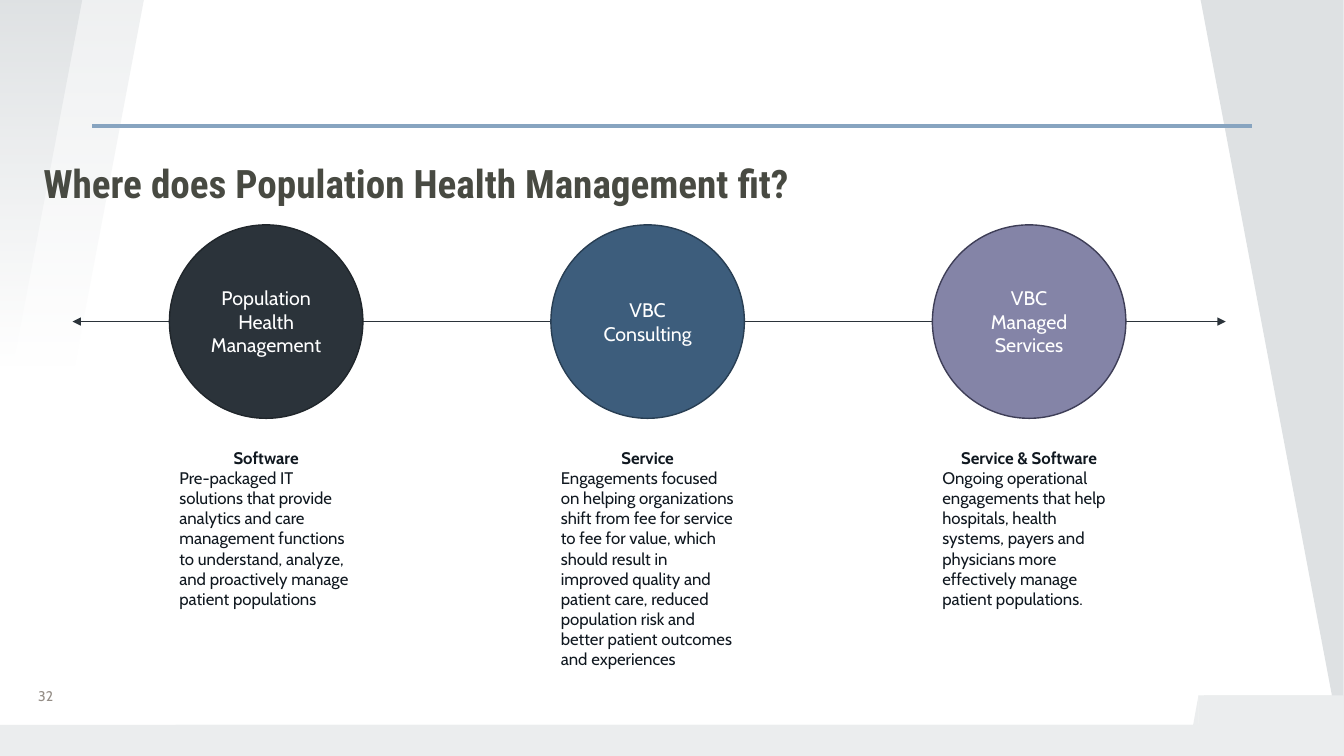
from dataclasses import dataclass
from typing import Any, Optional

from lxml import etree
from pptx import Presentation, dml, util as u
from pptx.dml import color
from pptx.enum import shapes, text
from pptx.oxml import ns

Pt = u.Pt
BODY_FONT = "Cabin"
TITLE_FONT = "Roboto Condensed"
FOOTER_GREY = "EBEDEE"
WIDTH, HEIGHT = 960, 540
CIRCLE_TOP, CIRCLE_SIZE = 160.6, 138.2
FIRST_LEFT, PITCH = 121, 272.5
NOTE_TOP = 316.1


@dataclass
class Span:
    words: str
    size: float
    colour: str
    font: str = BODY_FONT
    bold: bool = False
    align: Any = text.PP_ALIGN.LEFT
    spacing: Optional[float] = None


@dataclass
class Block:
    left: float
    top: float
    width: float
    height: float
    fill: str
    kind: Any = shapes.MSO_SHAPE.RECTANGLE
    flips: str = ""
    line: Optional[str] = None


@dataclass
class Offering:
    name: str
    fill: str
    line: str
    heading: str
    detail: str
    note_height: float


TRIANGLE = shapes.MSO_SHAPE.RIGHT_TRIANGLE
SLANTS = [
    Block(0.7, -0.7, 102.2, 541.4, "DEE1E3", TRIANGLE, "V"),
    Block(-43.2, -1.4, 102.2, 541.4, "BDC3C7", TRIANGLE, "V"),
]
FADE = Block(0, -2.2, 125.3, 532.1, "FFFFFF")
RIGHT_SLANT = Block(857.5, -0.7, 102.2, 541.4, "DEE1E3", TRIANGLE, "HV")

OFFERINGS = [
    Offering("Population Health Management", "2B333A", "20262B", "Software",
             "Pre-packaged IT solutions that provide analytics and care management "
             "functions to understand, analyze, and proactively manage patient populations",
             123.8),
    Offering("VBC Consulting", "3D5D7C", "283E53", "Service",
             "Engagements focused on helping organizations shift from fee for service to "
             "fee for value, which should result in improved quality and patient care, "
             "reduced population risk and better patient outcomes and experiences",
             167),
    Offering("VBC Managed Services", "8484A7", "3E3E57", "Service & Software",
             "Ongoing operational engagements that help hospitals, health systems, payers "
             "and physicians more effectively manage patient populations.",
             123.8),
]


def rgb(value: str) -> color.RGBColor:
    return color.RGBColor.from_string(value)


def apply(target: Any, values: dict) -> None:
    for name, value in values.items():
        setattr(target, name, value)


def write(box: Any, spans: list[Span], anchor: Any, fit: Any = text.MSO_AUTO_SIZE.NONE) -> None:
    frame = box.text_frame
    apply(frame, {"word_wrap": True, "auto_size": fit, "vertical_anchor": anchor})
    for index, span in enumerate(spans):
        para = frame.add_paragraph() if index else frame.paragraphs[0]
        apply(para, {"alignment": span.align, "line_spacing": span.spacing})
        run = para.add_run()
        run.text = span.words
        apply(run.font, {"name": span.font, "size": Pt(span.size), "bold": span.bold})
        run.font.color.rgb = rgb(span.colour)


def add_block(page: Any, block: Block) -> Any:
    shape = page.shapes.add_shape(block.kind, Pt(block.left), Pt(block.top),
                                  Pt(block.width), Pt(block.height))
    shape.shadow.inherit = False
    shape.fill.solid()
    shape.fill.fore_color.rgb = rgb(block.fill)
    if block.line:
        shape.line.color.rgb = rgb(block.line)
        shape.line.width = Pt(1)
    else:
        shape.line.fill.background()
    for axis in block.flips:
        shape.element.spPr.get_or_add_xfrm().set(f"flip{axis}", "1")
    return shape


def add_fade(page: Any, block: Block) -> None:
    shape = add_block(page, block)
    shape.fill.gradient()
    shape.fill.gradient_angle = 270
    stops = shape.element.spPr.find(".//" + ns.qn("a:gsLst"))
    for stop in list(stops):
        stops.remove(stop)
    for position, opacity in ((0, 50), (50, 100), (100, 100)):
        stop = etree.SubElement(stops, ns.qn("a:gs"), pos=str(position * 1000))
        tint = etree.SubElement(stop, ns.qn("a:srgbClr"), val=block.fill)
        etree.SubElement(tint, ns.qn("a:alpha"), val=str(opacity * 1000))


def add_footer(page: Any, shift: float) -> None:
    add_block(page, Block(848.2 + shift, 496.8, 7.9, 43.2, FOOTER_GREY, TRIANGLE, "H"))
    add_block(page, Block(856.1 + shift, 496.8, 103.7, 43.2, FOOTER_GREY))
    add_block(page, Block(0, 517.7, WIDTH + shift, 22.3, FOOTER_GREY))


def add_rule(page: Any, left: float, right: float, top: float, colour: str,
             width: float, arrows: bool = False) -> None:
    rule = page.shapes.add_connector(shapes.MSO_CONNECTOR.STRAIGHT,
                                     Pt(left), Pt(top), Pt(right), Pt(top))
    rule.line.color.rgb = rgb(colour)
    rule.line.width = Pt(width)
    if arrows:
        for end in ("a:headEnd", "a:tailEnd"):
            etree.SubElement(rule.line._get_or_add_ln(), ns.qn(end), type="triangle")
    etree.SubElement(rule.element.spPr, ns.qn("a:effectLst"))


def add_text(page: Any, left: float, top: float, width: float, height: float,
             spans: list[Span], anchor: Any, fit: Any = text.MSO_AUTO_SIZE.NONE) -> None:
    box = page.shapes.add_textbox(Pt(left), Pt(top), Pt(width), Pt(height))
    write(box, spans, anchor, fit)


def add_offering(page: Any, left: float, offering: Offering) -> None:
    centre = text.PP_ALIGN.CENTER
    circle = add_block(page, Block(left, CIRCLE_TOP, CIRCLE_SIZE, CIRCLE_SIZE, offering.fill,
                                   shapes.MSO_SHAPE.OVAL, line=offering.line))
    write(circle, [Span(offering.name, 14, "FFFFFF", align=centre)], text.MSO_ANCHOR.MIDDLE)
    add_text(page, left, NOTE_TOP, CIRCLE_SIZE, offering.note_height,
             [Span(offering.heading, 12, "101820", bold=True, align=centre),
              Span(offering.detail, 12, "101820")],
             text.MSO_ANCHOR.TOP, text.MSO_AUTO_SIZE.SHAPE_TO_FIT_TEXT)


def main() -> None:
    deck = Presentation()
    apply(deck, {"slide_width": Pt(WIDTH), "slide_height": Pt(HEIGHT)})
    page = deck.slides.add_slide(deck.slide_layouts[6])
    add_footer(page, 0)
    for slant in SLANTS:
        add_block(page, slant)
    add_fade(page, FADE)
    add_block(page, RIGHT_SLANT)
    add_rule(page, 66, 894, 90, "87A4C0", 3)
    add_text(page, 20.2, 478.1, 216, 28.8, [Span("32", 10, "948D86")], text.MSO_ANCHOR.BOTTOM)
    add_footer(page, 4)
    add_rule(page, 51.8, 875.5, CIRCLE_TOP + CIRCLE_SIZE / 2, "2B333A", 0.5, arrows=True)
    for index, offering in enumerate(OFFERINGS):
        add_offering(page, FIRST_LEFT + index * PITCH, offering)
    add_text(page, 23.8, 113.8, 879.8, 38.2,
             [Span("Where does Population Health Management fit?", 28, "484A42",
                   TITLE_FONT, True, spacing=0.9)], text.MSO_ANCHOR.MIDDLE)
    deck.save("out.pptx")


if __name__ == "__main__":
    main()
